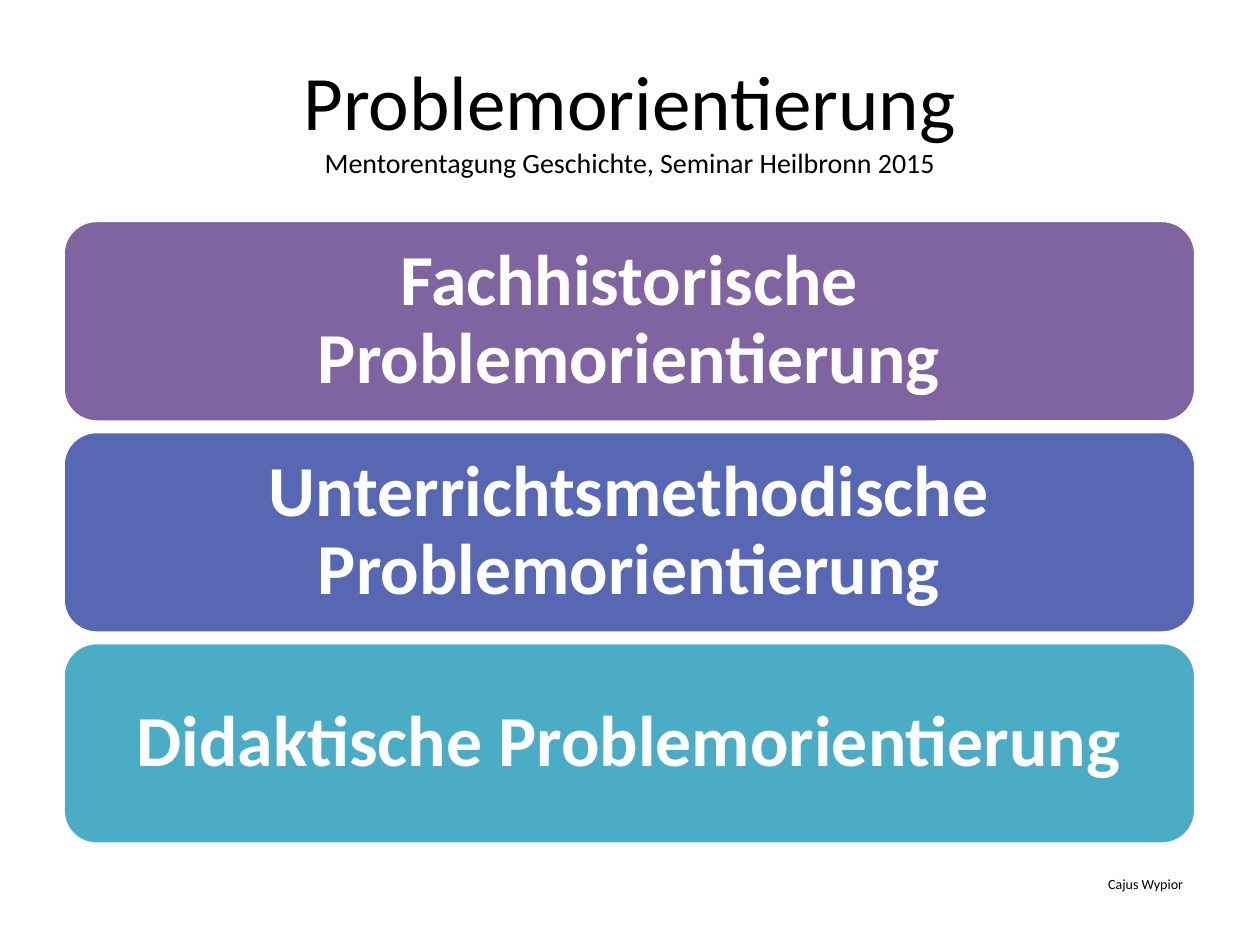
import pptx
import pptx.util
import pptx.dml.color
import pptx.enum.shapes
import pptx.enum.text

Inches = pptx.util.Inches
Align = pptx.enum.text.PP_ALIGN
Anchor = pptx.enum.text.MSO_ANCHOR
hues = {"ink": "000000", "white": "FFFFFF", "plum": "8064A2", "blue": "5767B4", "teal": "4BACC6"}


def color(name):
    return pptx.dml.color.RGBColor.from_string(hues[name])


def write(para, text, size, hue, bold=False):
    run = para.add_run()
    run.text = text
    style = {"name": "Calibri", "size": pptx.util.Pt(size), "bold": bold}
    for key, value in style.items():
        setattr(run.font, key, value)
    run.font.color.rgb = color(hue)


deck = pptx.Presentation()
deck.slide_width = Inches(10)
deck.slide_height = Inches(7.5)
slide = deck.slides.add_slide(deck.slide_layouts[6])

title = slide.shapes.add_textbox(Inches(0.5), Inches(0.3), Inches(9), Inches(1.25))
frame = title.text_frame
frame.word_wrap = True
frame.vertical_anchor = Anchor.MIDDLE
para = frame.paragraphs[0]
para.alignment = Align.CENTER
write(para, "Problemorientierung", 44, "ink")
para.add_line_break()
write(para, "Mentorentagung Geschichte, Seminar Heilbronn 2015", 16, "ink")

bars = [
    ("Fachhistorische Problemorientierung", "plum"),
    ("Unterrichtsmethodische Problemorientierung", "blue"),
    ("Didaktische Problemorientierung", "teal"),
]
layout = {
    "word_wrap": True,
    "vertical_anchor": Anchor.MIDDLE,
    "margin_left": Inches(0.17),
    "margin_right": Inches(0.17),
    "margin_top": Inches(0.09),
    "margin_bottom": Inches(0.09),
}
top, step = 1.75, 1.675
for row, (text, hue) in enumerate(bars):
    bar = slide.shapes.add_shape(
        pptx.enum.shapes.MSO_SHAPE.ROUNDED_RECTANGLE,
        Inches(0.5), Inches(top + row * step), Inches(8.99), Inches(1.6))
    bar.shadow.inherit = False
    bar.fill.solid()
    bar.fill.fore_color.rgb = color(hue)
    bar.line.color.rgb = color("white")
    bar.line.width = pptx.util.Pt(2)
    for key, value in layout.items():
        setattr(bar.text_frame, key, value)
    para = bar.text_frame.paragraphs[0]
    para.alignment = Align.CENTER
    para.line_spacing = 0.9
    write(para, text, 41, "white", True)

credit = slide.shapes.add_textbox(Inches(8.62), Inches(6.9), Inches(0.87), Inches(0.24))
credit.text_frame.auto_size = pptx.enum.text.MSO_AUTO_SIZE.SHAPE_TO_FIT_TEXT
credit.text_frame.word_wrap = False
para = credit.text_frame.paragraphs[0]
para.alignment = Align.RIGHT
write(para, "Cajus Wypior", 8, "ink")

deck.save("out.pptx")
